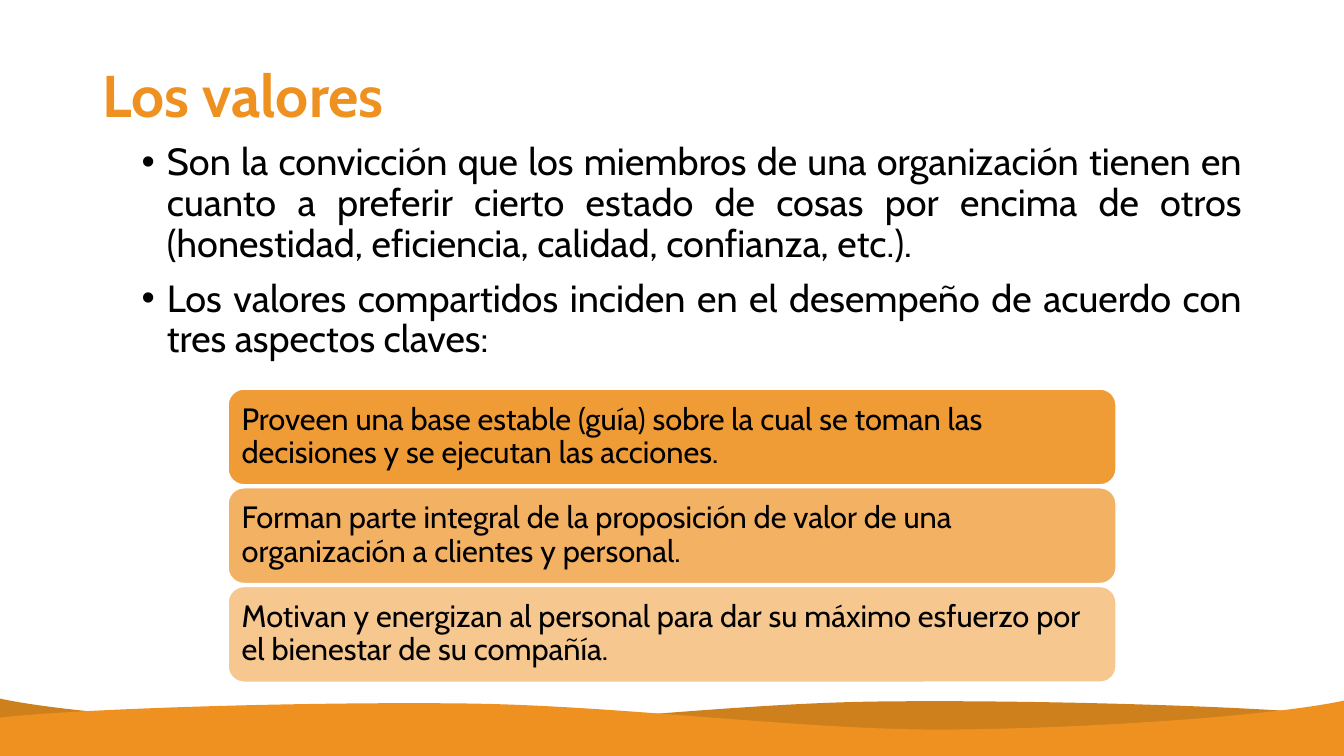
from lxml import etree
from pptx import Presentation
from pptx.dml.color import RGBColor
from pptx.enum import shapes, text
from pptx.oxml.ns import qn
from pptx.util import Pt

TITLE = "Los valores"
BULLETS = [
    "Son la convicción que los miembros de una organización tienen en cuanto a preferir "
    "cierto estado de cosas por encima de otros (honestidad, eficiencia, calidad, confianza, etc.).",
    "Los valores compartidos inciden en el desempeño de acuerdo con tres aspectos claves:",
]
ASPECTS = [
    ("Proveen una base estable (guía) sobre la cual se toman las decisiones y se ejecutan las acciones.", 90),
    ("Forman parte integral de la proposición de valor de una organización a clientes y personal.", 70),
    ("Motivan y energizan al personal para dar su máximo esfuerzo por el bienestar de su compañía.", 50),
]
FONT = "Cabin"
ORANGE, BROWN, BLACK, WHITE = "EE9121", "CE801C", "000000", "FFFFFF"
WIDTH, HEIGHT = 960, 540
TITLE_BOX = (66, 18, 828, 104.4)
BODY_BOX = (94, 98.4, 800, 160.6)
CARD_BOX = (162.9, 277.9, 634.3, 68.4)
CARD_STEP = 70.5
WAVE_CURVES = 3
WAVE = [
    (960, 511.2),
    (904.3, 504.7), (738.7, 499.7), (626.4, 501.1),
    (514.8, 502.6), (391, 519.8), (286.6, 519.8),
    (182.2, 519.1), (49, 509.8), (0, 499),
    (0, HEIGHT), (WIDTH, HEIGHT),
]


def rgb(value):
    return RGBColor.from_string(value)


def place(sp, box):
    sp.left, sp.top, sp.width, sp.height = map(Pt, box)


def write(p, content, size, color=BLACK, bold=False, align=text.PP_ALIGN.LEFT, before=0):
    p.alignment = align
    p.line_spacing = 0.9
    p.space_before = Pt(before)
    r = p.add_run()
    r.text = content
    r.font.name = FONT
    r.font.size = Pt(size)
    r.font.bold = bold
    r.font.color.rgb = rgb(color)


def paint(sp, color, opacity=100):
    sp.shadow.inherit = False
    sp.fill.solid()
    sp.fill.fore_color.rgb = rgb(color)
    if opacity < 100:
        fill = sp.fill._xPr.find(qn("a:solidFill"))
        etree.SubElement(fill[0], qn("a:alpha"), val=str(opacity * 1000))


def bend(sp):
    lines = list(sp._element.iter(qn("a:lnTo")))
    for i in range(0, WAVE_CURVES * 3, 3):
        curve = etree.Element(qn("a:cubicBezTo"))
        lines[i].addprevious(curve)
        for line in lines[i:i + 3]:
            curve.append(line[0])
            line.getparent().remove(line)


def add_wave(s, master, points, color, order):
    corners = [(Pt(x), Pt(y)) for x, y in points]
    builder = s.shapes.build_freeform(*corners[0])
    builder.add_line_segments(corners[1:], close=True)
    sp = builder.convert_to_shape()
    paint(sp, color)
    sp.line.fill.background()
    bend(sp)
    sp._element.nvSpPr.cNvPr.set("id", str(20 + order))
    master.shapes._spTree.insert(2 + order, sp._element)


def add_card(s, box, content, opacity):
    sp = s.shapes.add_shape(shapes.MSO_SHAPE.ROUNDED_RECTANGLE, *map(Pt, box))
    paint(sp, ORANGE, opacity)
    sp.line.color.rgb = rgb(WHITE)
    sp.line.width = Pt(1)
    tf = sp.text_frame
    tf.word_wrap = True
    tf.vertical_anchor = text.MSO_ANCHOR.MIDDLE
    tf.margin_left = tf.margin_right = tf.margin_top = tf.margin_bottom = Pt(6.4)
    write(tf.paragraphs[0], content, 22)


def main():
    prs = Presentation()
    prs.slide_width, prs.slide_height = Pt(WIDTH), Pt(HEIGHT)
    s = prs.slides.add_slide(prs.slide_layouts[1])

    front = [(WIDTH - x, min(y + 1.4, HEIGHT)) for x, y in WAVE]
    for order, (points, color) in enumerate([(WAVE, BROWN), (front, ORANGE)]):
        add_wave(s, prs.slide_master, points, color, order)

    title = s.shapes.title
    place(title, TITLE_BOX)
    title.text_frame.auto_size = text.MSO_AUTO_SIZE.NONE
    title.text_frame.vertical_anchor = text.MSO_ANCHOR.MIDDLE
    write(title.text_frame.paragraphs[0], TITLE, 42, ORANGE, bold=True)

    body = s.placeholders[1]
    place(body, BODY_BOX)
    tf = body.text_frame
    tf.auto_size = text.MSO_AUTO_SIZE.NONE
    for i, bullet in enumerate(BULLETS):
        p = tf.add_paragraph() if i else tf.paragraphs[0]
        write(p, bullet, 27, align=text.PP_ALIGN.JUSTIFY, before=10)
        pPr = p._p.get_or_add_pPr()
        pPr.set("marL", str(Pt(18)))
        pPr.set("indent", str(-Pt(18)))
        etree.SubElement(pPr, qn("a:buFont"), typeface="Arial")
        etree.SubElement(pPr, qn("a:buChar"), char="•")

    left, top, width, height = CARD_BOX
    for i, (content, opacity) in enumerate(ASPECTS):
        add_card(s, (left, top + i * CARD_STEP, width, height), content, opacity)

    prs.save("out.pptx")


if __name__ == "__main__":
    main()
